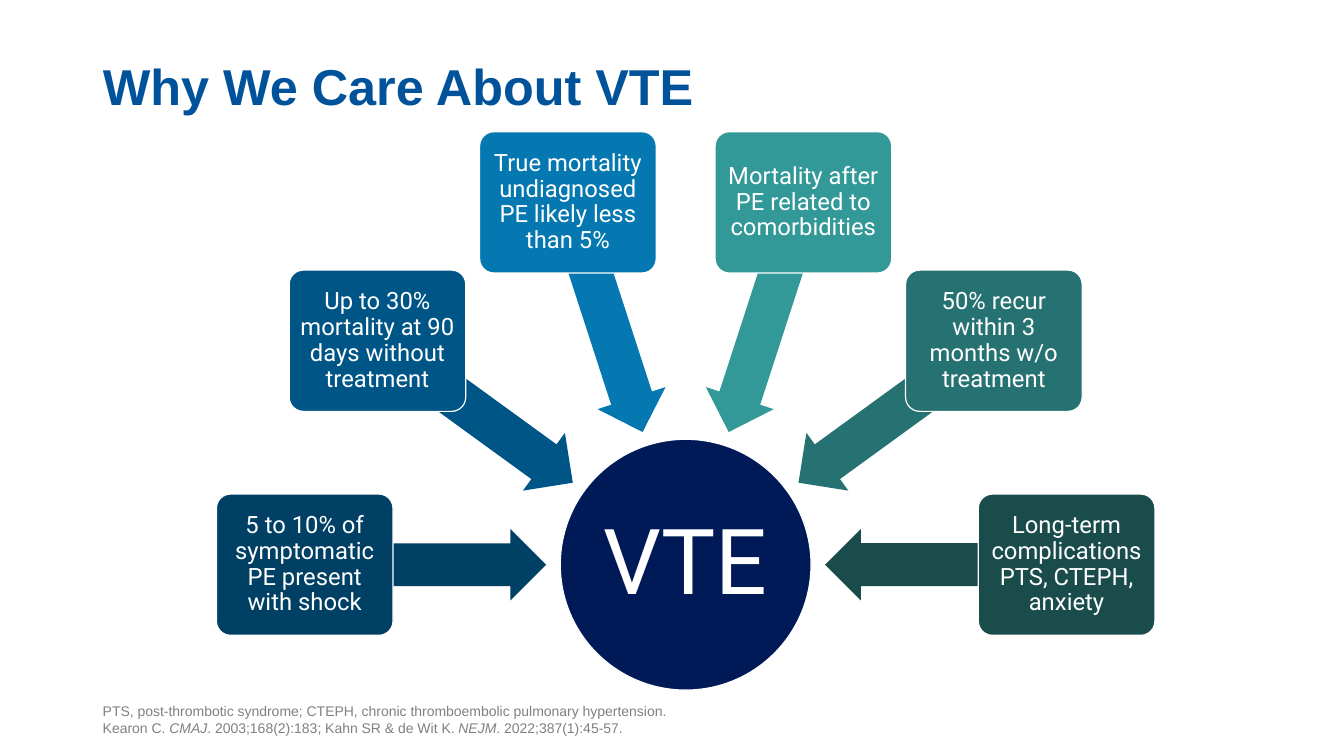
from math import cos, radians, sin

from pptx import Presentation
from pptx.dml.color import RGBColor
from pptx.enum.shapes import MSO_SHAPE
from pptx.enum.text import MSO_ANCHOR, MSO_AUTO_SIZE, PP_ALIGN
from pptx.util import Cm, Pt

ELLIPSE, ARROW, CARD = MSO_SHAPE.OVAL, MSO_SHAPE.LEFT_ARROW, MSO_SHAPE.ROUNDED_RECTANGLE
MIDDLE, BOTTOM = MSO_ANCHOR.MIDDLE, MSO_ANCHOR.BOTTOM
LEFT, CENTER = PP_ALIGN.LEFT, PP_ALIGN.CENTER
NO_AUTOFIT = MSO_AUTO_SIZE.NONE

TITLE = "Why We Care About VTE"
HUB = "VTE"
# Clockwise from the left: statement, colour name
SPOKES = [
    ("5 to 10% of symptomatic PE present with shock", "navy"),
    ("Up to 30% mortality at 90 days without treatment", "blue"),
    ("True mortality undiagnosed PE likely less than 5%", "azure"),
    ("Mortality after PE related to comorbidities", "teal"),
    ("50% recur within 3 months w/o treatment", "pine"),
    ("Long-term complications PTS, CTEPH, anxiety", "forest"),
]
ABBREVIATIONS = "PTS, post-thrombotic syndrome; CTEPH, chronic thromboembolic pulmonary hypertension."
# Text, italic
CITATIONS = [
    ("Kearon C. ", False),
    ("CMAJ", True),
    (". 2003;168(2):183; Kahn SR & de Wit K. ", False),
    ("NEJM", True),
    (". 2022;387(1):45-57.", False),
]
COLORS = {
    "title": "00539B", "hub": "001A57", "white": "FFFFFF", "note": "808080",
    "navy": "004065", "blue": "005587", "azure": "0577B1",
    "teal": "339898", "pine": "267272", "forest": "1A4C4C",
}
FORMATS = {
    "title": {"name": "Arial", "size": Pt(36), "bold": True},
    "hub": {"name": "Roboto", "size": Pt(65)},
    "spoke": {"name": "Roboto", "size": Pt(17)},
    "note": {"name": "Arial", "size": Pt(10)},
}

# Lengths in cm
MARGIN, CONTENT_WIDTH = 2.34, 29.21
HUB_X, HUB_Y, HUB_SIZE = 17.28, 14.23, 6.32
ARROW_RADIUS, ARROW_SIZE = 6.55, (6.07, 1.8)
CARD_RADIUS, CARD_SIZE = 9.6, (4.45, 3.56)
INSET = 0.11


def color(name):
    return RGBColor.from_string(COLORS[name])


def format_font(font, style, color_name):
    for attribute, value in FORMATS[style].items():
        setattr(font, attribute, value)
    font.color.rgb = color(color_name)


def add_radial(slide, kind, size, fill, radius=0, angle=0):
    """Add a shape centred at a radius and clockwise angle from the hub."""
    width, height = size
    x = HUB_X + radius * cos(radians(angle))
    y = HUB_Y + radius * sin(radians(angle))
    shape = slide.shapes.add_shape(
        kind, Cm(x - width / 2), Cm(y - height / 2), Cm(width), Cm(height))
    shape.shadow.inherit = False
    shape.fill.solid()
    shape.fill.fore_color.rgb = color(fill)
    return shape


def add_label(shape, text, style):
    shape.line.color.rgb = color("white")
    shape.line.width = Pt(0.85)
    frame = shape.text_frame
    frame.word_wrap = True
    frame.vertical_anchor = MIDDLE
    for side in ("left", "top", "right", "bottom"):
        setattr(frame, f"margin_{side}", Cm(INSET))
    paragraph = frame.paragraphs[0]
    paragraph.text = text
    paragraph.alignment = CENTER
    paragraph.line_spacing = 0.9
    format_font(paragraph.runs[0].font, style, "white")


def add_title(slide):
    title = slide.shapes.title
    title.left, title.top = Cm(MARGIN), Cm(0)
    title.width, title.height = Cm(CONTENT_WIDTH), Cm(3.07)
    frame = title.text_frame
    frame.text = TITLE
    frame.auto_size = NO_AUTOFIT
    frame.vertical_anchor = BOTTOM
    paragraph = frame.paragraphs[0]
    paragraph.alignment = LEFT
    paragraph.line_spacing = 0.9
    format_font(paragraph.runs[0].font, "title", "title")


def add_spokes(slide):
    step = 180 / (len(SPOKES) - 1)
    for index, (statement, fill) in enumerate(SPOKES):
        angle = 180 + index * step
        arrow = add_radial(slide, ARROW, ARROW_SIZE, fill, ARROW_RADIUS, angle)
        arrow.rotation = angle % 360
        arrow.adjustments[0] = 0.6
        arrow.line.fill.background()
        card = add_radial(slide, CARD, CARD_SIZE, fill, CARD_RADIUS, angle)
        card.adjustments[0] = 0.1
        add_label(card, statement, "spoke")


def add_references(slide):
    note = slide.shapes.add_textbox(Cm(MARGIN), Cm(17.65), Cm(CONTENT_WIDTH), Cm(1.02))
    frame = note.text_frame
    frame.word_wrap = True
    frame.vertical_anchor = BOTTOM
    paragraph = frame.paragraphs[0]
    paragraph.add_run().text = ABBREVIATIONS
    paragraph.add_line_break()
    for text, italic in CITATIONS:
        run = paragraph.add_run()
        run.text = text
        run.font.italic = italic
    for run in paragraph.runs:
        format_font(run.font, "note", "note")


def main():
    deck = Presentation()
    deck.slide_width, deck.slide_height = Cm(33.87), Cm(19.05)
    slide = deck.slides.add_slide(deck.slide_layouts.get_by_name("Title Only"))
    add_title(slide)
    hub = add_radial(slide, ELLIPSE, (HUB_SIZE, HUB_SIZE), "hub")
    add_label(hub, HUB, "hub")
    add_spokes(slide)
    add_references(slide)
    deck.save("out.pptx")


if __name__ == "__main__":
    main()
